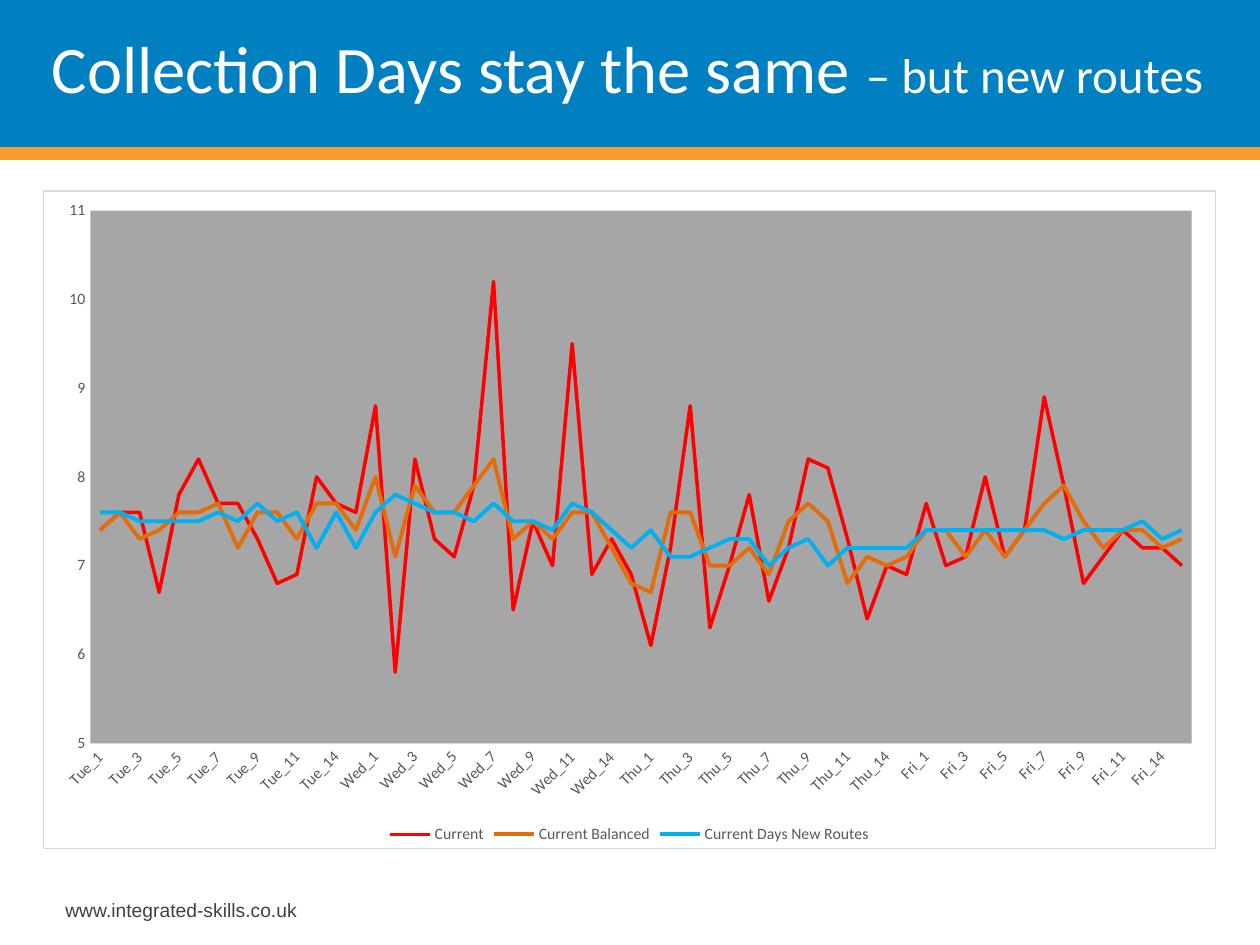
"""Build the slide comparing collection-route workloads by day."""
from lxml import etree
from pptx import Presentation
from pptx.chart.data import CategoryChartData
from pptx.dml.color import RGBColor
from pptx.dml.fill import FillFormat
from pptx.dml.line import LineFormat
from pptx.enum.chart import XL_CHART_TYPE, XL_LEGEND_POSITION, XL_TICK_MARK
from pptx.enum.shapes import MSO_CONNECTOR, MSO_SHAPE
from pptx.enum.text import MSO_ANCHOR, MSO_AUTO_SIZE, PP_ALIGN
from pptx.oxml.ns import qn
from pptx.util import Inches, Pt

LINE_CHART = XL_CHART_TYPE.LINE
BOTTOM = XL_LEGEND_POSITION.BOTTOM
NO_TICKS = XL_TICK_MARK.NONE
STRAIGHT = MSO_CONNECTOR.STRAIGHT
RECTANGLE = MSO_SHAPE.RECTANGLE
MIDDLE = MSO_ANCHOR.MIDDLE
NO_AUTOFIT = MSO_AUTO_SIZE.NONE
LEFT = PP_ALIGN.LEFT

THEME = {
    "color": {name: RGBColor.from_string(code) for name, code in {
        "band": "0080C0", "rule": "F89C31", "border": "D9D9D9", "plot": "A6A6A6",
        "white": "FFFFFF", "footer": "404040", "label": "595959", "black": "000000",
        "Current": "FF0000", "Current Balanced": "E46C0A",
        "Current Days New Routes": "00B0F0"}.items()},
    "size": {name: Pt(points) for name, points in {
        "title": 38, "subtitle": 28, "footer": 11, "chart": 10, "label": 9}.items()},
    "line": {name: Pt(points) for name, points in {
        "rule": 7.75, "border": 0.75, "Current": 2, "Current Balanced": 2.25,
        "Current Days New Routes": 2.25}.items()},
    "font": {"main": "Calibri", "footer": "Arial"},
}
COLOR, LINE = THEME["color"], THEME["line"]

ROUTES = [*range(1, 13), 14, 15]
HOURS = {
    "Current": {
        "Tue": [7.4, 7.6, 7.6, 6.7, 7.8, 8.2, 7.7, 7.7, 7.3, 6.8, 6.9, 8, 7.7, 7.6],
        "Wed": [8.8, 5.8, 8.2, 7.3, 7.1, 7.9, 10.2, 6.5, 7.5, 7, 9.5, 6.9, 7.3, 6.9],
        "Thu": [6.1, 7.2, 8.8, 6.3, 7, 7.8, 6.6, 7.2, 8.2, 8.1, 7.3, 6.4, 7, 6.9],
        "Fri": [7.7, 7, 7.1, 8, 7.1, 7.4, 8.9, 7.9, 6.8, 7.1, 7.4, 7.2, 7.2, 7],
    },
    "Current Balanced": {
        "Tue": [7.4, 7.6, 7.3, 7.4, 7.6, 7.6, 7.7, 7.2, 7.6, 7.6, 7.3, 7.7, 7.7, 7.4],
        "Wed": [8, 7.1, 7.9, 7.6, 7.6, 7.9, 8.2, 7.3, 7.5, 7.3, 7.6, 7.6, 7.2, 6.8],
        "Thu": [6.7, 7.6, 7.6, 7, 7, 7.2, 6.9, 7.5, 7.7, 7.5, 6.8, 7.1, 7, 7.1],
        "Fri": [7.4, 7.4, 7.1, 7.4, 7.1, 7.4, 7.7, 7.9, 7.5, 7.2, 7.4, 7.4, 7.2, 7.3],
    },
    "Current Days New Routes": {
        "Tue": [7.6, 7.6, 7.5, 7.5, 7.5, 7.5, 7.6, 7.5, 7.7, 7.5, 7.6, 7.2, 7.6, 7.2],
        "Wed": [7.6, 7.8, 7.7, 7.6, 7.6, 7.5, 7.7, 7.5, 7.5, 7.4, 7.7, 7.6, 7.4, 7.2],
        "Thu": [7.4, 7.1, 7.1, 7.2, 7.3, 7.3, 7, 7.2, 7.3, 7, 7.2, 7.2, 7.2, 7.2],
        "Fri": [7.4, 7.4, 7.4, 7.4, 7.4, 7.4, 7.4, 7.3, 7.4, 7.4, 7.4, 7.5, 7.3, 7.4],
    },
}


def set_font(font, size, shade, family="main"):
    values = {"size": THEME["size"][size], "name": THEME["font"][family], "bold": False}
    for name, value in values.items():
        setattr(font, name, value)
    font.color.rgb = COLOR[shade]


def add_node(parent, tag, **attributes):
    return etree.SubElement(parent, qn(tag), attributes)


deck = Presentation()
deck.slide_width, deck.slide_height = Inches(10), Inches(7.5)
page = deck.slides.add_slide(deck.slide_layouts[5])

footer = page.shapes.add_textbox(Inches(0.42), Inches(7.08), Inches(2.06), Inches(0.29))
footer.text_frame.word_wrap = False
span = footer.text_frame.paragraphs[0].add_run()
span.text = "www.integrated-skills.co.uk"
set_font(span.font, "footer", "footer", "footer")

band = page.shapes.add_shape(RECTANGLE, 0, 0, deck.slide_width, Inches(1.25))
band.shadow.inherit = False
band.fill.solid()
band.fill.fore_color.rgb = COLOR["band"]
band.line.fill.background()

rule = page.shapes.add_connector(STRAIGHT, 0, Inches(1.22), deck.slide_width, Inches(1.22))
rule.line.color.rgb = COLOR["rule"]
rule.line.width = LINE["rule"]
add_node(rule.element.spPr, "a:effectLst")

data = CategoryChartData()
data.categories = [f"{day}_{route}" for day in HOURS["Current"] for route in ROUTES]
for name, days in HOURS.items():
    data.add_series(name, [hours for day in days.values() for hours in day])
chart = page.shapes.add_chart(
    LINE_CHART, Inches(0.34), Inches(1.51), Inches(9.31), Inches(5.23), data).chart
chart.has_title = False
set_font(chart.font, "chart", "black")
chart.has_legend = True
chart.legend.position = BOTTOM
chart.legend.include_in_layout = False
set_font(chart.legend.font, "label", "label")

plot = chart.plots[0]
plot.vary_by_categories = False
for series in plot.series:
    series.smooth = False
    series.format.line.color.rgb = COLOR[series.name]
    series.format.line.width = LINE[series.name]

days_axis, hours_axis = chart.category_axis, chart.value_axis
for axis in (days_axis, hours_axis):
    axis.has_major_gridlines = False
    axis.major_tick_mark = axis.minor_tick_mark = NO_TICKS
    set_font(axis.tick_labels.font, "label", "label")
days_axis.format.line.color.rgb = COLOR["border"]
days_axis.format.line.width = LINE["border"]
hours_axis.format.line.fill.background()
scale = {"minimum_scale": 5, "maximum_scale": 11, "major_unit": 1}
for name, value in scale.items():
    setattr(hours_axis, name, value)
hours_axis.tick_labels.number_format = "0"
hours_axis.tick_labels.number_format_is_linked = False

chart_body = chart.element.find(qn("c:chart"))
plot_area = chart_body.find(qn("c:plotArea"))
days_node = plot_area.find(qn("c:catAx"))
days_node.find(f"{qn('c:txPr')}/{qn('a:bodyPr')}").set("rot", str(-45 * 60000))
label_step = add_node(days_node, "c:tickLblSkip", val="2")
days_node.find(qn("c:noMultiLvlLbl")).addprevious(label_step)

for layout in plot_area.findall(qn("c:layout")):
    plot_area.remove(layout)
layout = add_node(plot_area, "c:layout")
plot_area.insert(0, layout)
placement = add_node(layout, "c:manualLayout")
plot_frame = {"layoutTarget": "inner", "xMode": "edge", "yMode": "edge",
              "x": 0.04, "y": 0.03, "w": 0.94, "h": 0.81}
for name, value in plot_frame.items():
    add_node(placement, f"c:{name}", val=str(value))

plot_surface = add_node(plot_area, "c:spPr")
chart_surface = add_node(chart.element, "c:spPr")
chart_body.addnext(chart_surface)
for surface, shade in ((plot_surface, "plot"), (chart_surface, "white")):
    fill = FillFormat.from_fill_parent(surface)
    fill.solid()
    fill.fore_color.rgb = COLOR[shade]
LineFormat(plot_surface).fill.background()
border = LineFormat(chart_surface)
border.color.rgb = COLOR["border"]
border.width = LINE["border"]

title = page.shapes.title
place = {"left": 0.31, "top": 0.03, "width": 9.63, "height": 1}
for name, value in place.items():
    setattr(title, name, Inches(value))
frame_format = {"word_wrap": True, "auto_size": NO_AUTOFIT, "vertical_anchor": MIDDLE}
for name, value in frame_format.items():
    setattr(title.text_frame, name, value)
para = title.text_frame.paragraphs[0]
para.alignment = LEFT
title_spans = {"title": "Collection Days stay the same ", "subtitle": "– but new routes"}
for size, text in title_spans.items():
    span = para.add_run()
    span.text = text
    set_font(span.font, size, "white")
title.element.getparent().append(title.element)

deck.save("out.pptx")
